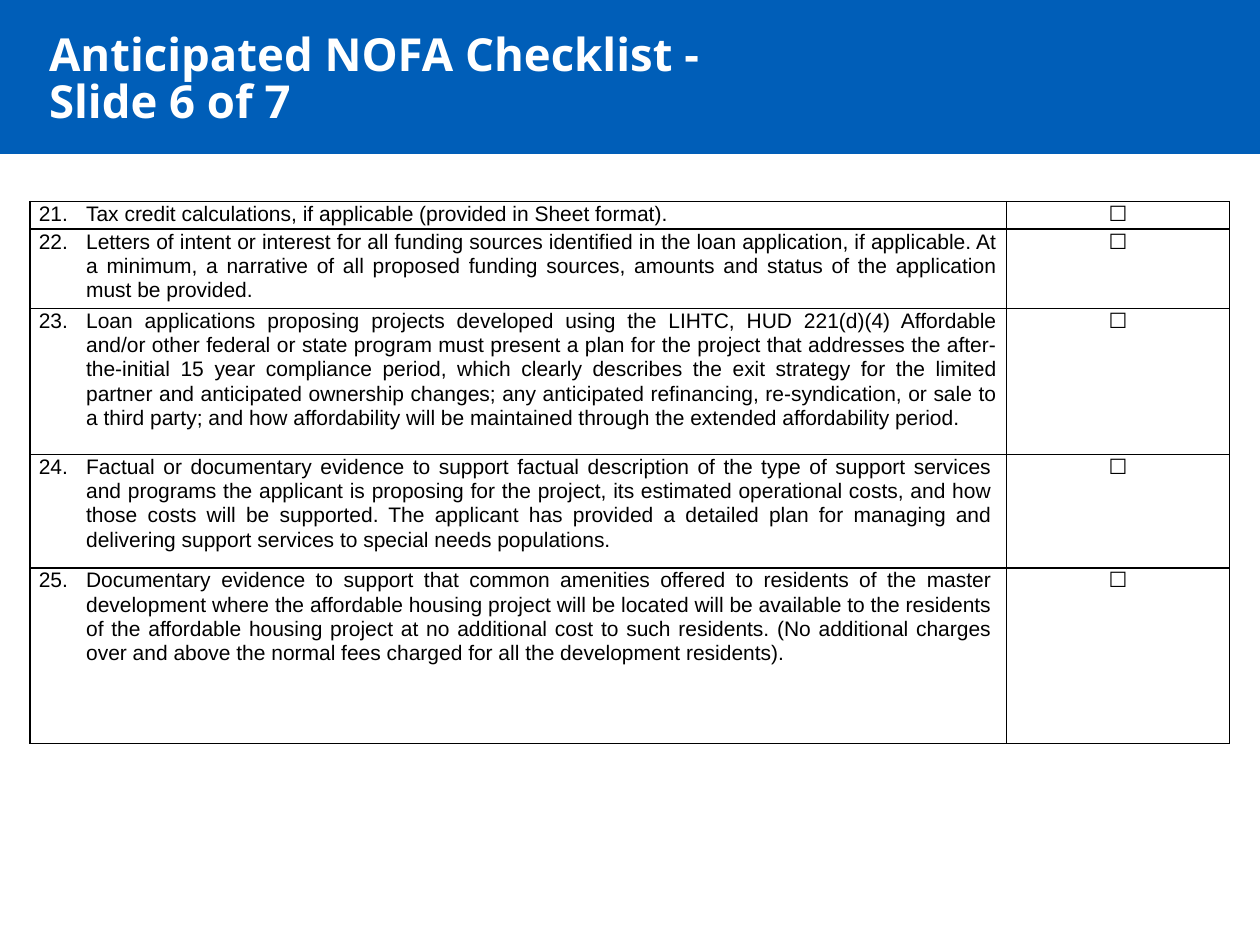
from lxml.etree import SubElement
from pptx import Presentation
from pptx.dml.color import RGBColor
from pptx.enum.shapes import MSO_SHAPE
from pptx.enum.text import MSO_ANCHOR, MSO_AUTO_SIZE, PP_ALIGN
from pptx.oxml.ns import qn
from pptx.util import Pt


def color(hex_string):
    return RGBColor.from_string(hex_string)


def add_borders(cell):
    """Draw a 1 pt black line on all four sides; call before setting the fill."""
    properties = cell._tc.get_or_add_tcPr()
    for side in ("lnL", "lnR", "lnT", "lnB"):
        line = SubElement(properties, qn(f"a:{side}"), w=str(Pt(1)))
        solid = SubElement(line, qn("a:solidFill"))
        SubElement(solid, qn("a:srgbClr"), val="000000")


FIRST_NUMBER = 21
# requirement, row height, space after, right margin
requirements = [
    ("Tax credit calculations, if applicable (provided in Sheet format).", 15.8, 12, 5),
    ("Letters of intent or interest for all funding sources identified in the loan "
     "application, if applicable. At a minimum, a narrative of all proposed funding "
     "sources, amounts and status of the application must be provided.", 45.4, 12, 5),
    ("Loan applications proposing projects developed using the LIHTC, HUD 221(d)(4) "
     "Affordable and/or other federal or state program must present a plan for the "
     "project that addresses the after-the-initial 15 year compliance period, which "
     "clearly describes the exit strategy for the limited partner and anticipated "
     "ownership changes; any anticipated refinancing, re-syndication, or sale to a third "
     "party; and how affordability will be maintained through the extended affordability "
     "period.", 83.5, 12, 5),
    ("Factual or documentary evidence to support factual description of the type of "
     "support services and programs the applicant is proposing for the project, its "
     "estimated operational costs, and how those costs will be supported. The applicant "
     "has provided a detailed plan for managing and delivering support services to "
     "special needs populations.", 64.8, 0.1, 8),
    ("Documentary evidence to support that common amenities offered to residents of the "
     "master development where the affordable housing project will be located will be "
     "available to the residents of the affordable housing project at no additional cost "
     "to such residents. (No additional charges over and above the normal fees charged "
     "for all the development residents).", 100.1, 0.1, 8),
]

prs = Presentation()
prs.slide_width, prs.slide_height = Pt(720), Pt(540)
slide = prs.slides.add_slide(prs.slide_layouts[5])

# Header band, placed behind the title
band = slide.shapes.add_shape(MSO_SHAPE.RECTANGLE, 0, 0, Pt(720), Pt(88))
band.shadow.inherit = False
band.fill.solid()
band.fill.fore_color.rgb = color("005EB8")
band.line.fill.background()
slide.shapes._spTree.insert(2, band._element)

title = slide.shapes.title
title.left, title.top, title.width, title.height = Pt(28), Pt(14.4), Pt(439), Pt(63.4)
heading = title.text_frame
heading.text = "Anticipated NOFA Checklist - Slide 6 of 7"
heading.margin_left = heading.margin_right = heading.margin_top = heading.margin_bottom = 0
heading.word_wrap = True
heading.auto_size = MSO_AUTO_SIZE.NONE
heading.vertical_anchor = MSO_ANCHOR.MIDDLE
heading_line = heading.paragraphs[0]
heading_line.alignment = PP_ALIGN.LEFT
heading_line.line_spacing = 0.87
heading_line.font.name = "Open Sans"
heading_line.font.size = Pt(26)
heading_line.font.bold = True
heading_line.font.color.rgb = color("FFFFFF")

# Checklist
checklist = slide.shapes.add_table(len(requirements), 2, Pt(17.2), Pt(115.2),
                                   Pt(685.5), Pt(309.6)).table
checklist.first_row = checklist.horz_banding = False
checklist.columns[0].width = Pt(558)
checklist.columns[1].width = Pt(127.5)

for index, (requirement, height, space_after, right_margin) in enumerate(requirements):
    checklist.rows[index].height = Pt(height)
    for column, text in enumerate((requirement, "☐")):
        cell = checklist.cell(index, column)
        add_borders(cell)
        cell.fill.background()
        cell.margin_left = Pt(5)
        cell.margin_right = Pt(right_margin if column == 0 else 5)
        cell.margin_top = cell.margin_bottom = 0
        cell.text = text
        paragraph = cell.text_frame.paragraphs[0]
        if column == 0:
            numbering = paragraph._p.get_or_add_pPr()
            numbering.set("marL", str(Pt(27)))
            numbering.set("indent", str(-Pt(27)))
            SubElement(numbering, qn("a:buFont"), typeface="Arial")
            SubElement(numbering, qn("a:buAutoNum"), type="arabicPeriod",
                       startAt=str(FIRST_NUMBER + index))
        paragraph.alignment = PP_ALIGN.CENTER if column else PP_ALIGN.JUSTIFY
        paragraph.line_spacing = 1.03
        paragraph.space_after = Pt(space_after)
        paragraph.font.name = "Arial"
        paragraph.font.size = Pt(12)
        paragraph.font.color.rgb = color("000000")

prs.save("out.pptx")
